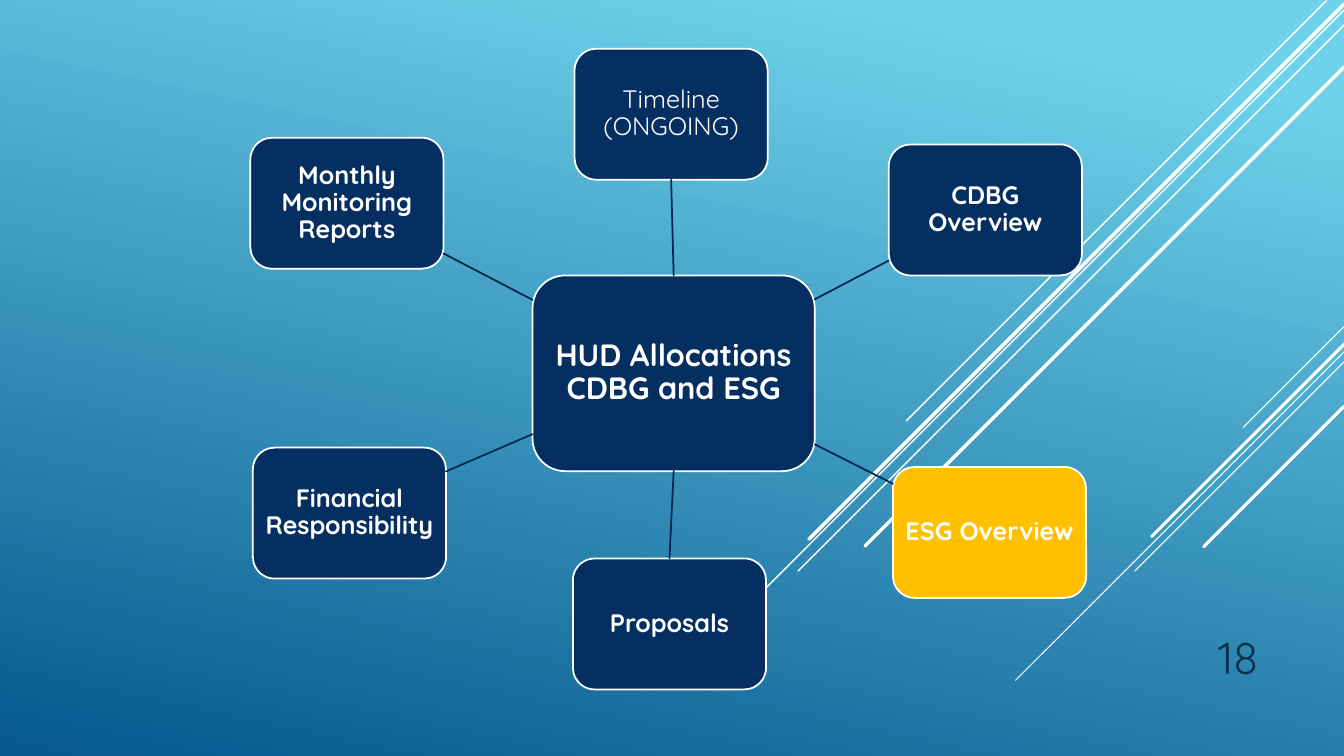
from dataclasses import dataclass

import pptx
import pptx.dml.color
import pptx.enum.shapes
import pptx.enum.text
import pptx.oxml.ns
import pptx.oxml.xmlchemy
import pptx.util
from lxml import etree

COLUMNS, ROWS = 16, 9
CELL = pptx.util.Inches(13.33) / COLUMNS


@dataclass(frozen=True)
class Theme:
    font: str = "Quicksand"
    sky: str = "6ED2EB"
    sea: str = "06588E"
    navy: str = "052F61"
    amber: str = "FFC000"
    spoke: str = "04264E"
    number: str = "0A304A"
    white: str = "FFFFFF"
    hub_size: int = 22
    node_size: int = 18
    number_size: int = 32
    outline: float = 1.25


@dataclass(frozen=True)
class Box:
    left: float
    top: float
    width: float
    height: float

    @property
    def center(self):
        return self.left + self.width / 2, self.top + self.height / 2

    def cells(self):
        return [grid(n) for n in (self.left, self.top, self.width, self.height)]

    def edge_toward(self, point):
        x, y = self.center
        across, down = point[0] - x, point[1] - y
        share = 1 / max(abs(across) / (self.width / 2), abs(down) / (self.height / 2))
        return x + across * share, y + down * share


THEME = Theme()
PAGE = Box(0, 0, COLUMNS, ROWS)
HUB = Box(6.34, 3.28, 3.36, 2.33)
NODE_WIDTH, NODE_HEIGHT = 2.3, 1.56
NODES = [
    ("Timeline (ONGOING)", 6.84, 0.58, THEME.navy, False),
    ("ESG Overview", 10.63, 5.56, THEME.amber, True),
    ("Proposals", 6.82, 6.65, THEME.navy, True),
    ("Monthly Monitoring Reports", 2.98, 1.64, THEME.navy, True),
    ("Financial Responsibility", 3.01, 5.33, THEME.navy, True),
    ("CDBG Overview", 10.58, 1.72, THEME.navy, True),
]
RAYS = [
    (0, 3.89, 1.2, 0.75), (0, 4.19, 3.91, 0.75), (0, 4.31, 2.49, 0.75),
    (0, 4.1, 2.29, 2.25), (0, 4.84, 1.67, 2.25),
    (0.21, 0.01, 5, 1), (0, 0.12, 7.98, 1), (0, 0.3, 6.5, 1),
    (0, 0.05, 6.37, 2.5), (0, 0.8, 5.7, 2.5),
]


def grid(cells):
    return pptx.util.Emu(round(cells * CELL))


def color(value):
    return pptx.dml.color.RGBColor.from_string(value)


def add_line(slide, start, end, line_color, weight):
    connector = slide.shapes.add_connector(
        pptx.enum.shapes.MSO_CONNECTOR.STRAIGHT, *map(grid, (*start, *end)))
    connector.line.color.rgb = color(line_color)
    connector.line.width = pptx.util.Pt(weight)
    properties = connector._element.spPr
    properties.find(pptx.oxml.ns.qn("a:ln")).set("cap", "rnd")
    etree.SubElement(properties, pptx.oxml.ns.qn("a:effectLst"))
    return connector


def write(shape, text, size, text_color, alignment, bold=False):
    shape.text_frame.word_wrap = True
    paragraph = shape.text_frame.paragraphs[0]
    paragraph.alignment = alignment
    run = paragraph.add_run()
    run.text = text
    run.font.name = THEME.font
    run.font.size = pptx.util.Pt(size)
    run.font.bold = bold
    run.font.color.rgb = color(text_color)
    return paragraph


def add_card(slide, box, text, size, fill, bold, margin):
    card = slide.shapes.add_shape(
        pptx.enum.shapes.MSO_SHAPE.ROUNDED_RECTANGLE, *box.cells())
    card.shadow.inherit = False
    card.fill.solid()
    card.fill.fore_color.rgb = color(fill)
    card.line.color.rgb = color(THEME.white)
    card.line.width = pptx.util.Pt(THEME.outline)
    frame = card.text_frame
    frame.vertical_anchor = pptx.enum.text.MSO_ANCHOR.MIDDLE
    frame.margin_left = frame.margin_right = pptx.util.Inches(margin)
    frame.margin_top = frame.margin_bottom = pptx.util.Inches(margin)
    paragraph = write(card, text, size, THEME.white, pptx.enum.text.PP_ALIGN.CENTER, bold)
    paragraph.line_spacing = 0.9
    return card


def add_background(slide):
    fill = slide.background.fill
    fill.gradient()
    fill.gradient_angle = 258
    stops = ((0.1, THEME.sky), (1, THEME.sea))
    for stop, (position, stop_color) in zip(fill.gradient_stops, stops):
        stop.position = position
        stop.color.rgb = color(stop_color)


def add_rays(slide, box):
    for inset, drop, length, weight in RAYS:
        x, y = box.left + box.width - inset, box.top + drop
        add_line(slide, (x, y), (x - length, y + length), THEME.white, weight)


def add_hub_and_spokes(slide, box):
    hub_box = Box(box.left + HUB.left, box.top + HUB.top, HUB.width, HUB.height)
    hub = add_card(slide, hub_box, "HUD Allocations CDBG and ESG",
                   THEME.hub_size, THEME.navy, True, 0.06)
    for text, left, top, fill, bold in NODES:
        node_box = Box(box.left + left, box.top + top, NODE_WIDTH, NODE_HEIGHT)
        node = add_card(slide, node_box, text, THEME.node_size, fill, bold, 0.05)
        spoke = add_line(slide, hub_box.edge_toward(node_box.center),
                         node_box.edge_toward(hub_box.center), THEME.spoke, THEME.outline)
        if node_box.top + node_box.height < hub_box.top and abs(
                node_box.center[0] - hub_box.center[0]) < 0.1:
            spoke.begin_connect(hub, 0)
            spoke.end_connect(node, 2)
        elif node_box.top > hub_box.top + hub_box.height:
            spoke.begin_connect(hub, 2)
            spoke.end_connect(node, 0)


def add_page_number(slide, box):
    number = slide.shapes.add_textbox(*box.cells())
    number.text_frame.vertical_anchor = pptx.enum.text.MSO_ANCHOR.BOTTOM
    write(number, "18", THEME.number_size, THEME.number, pptx.enum.text.PP_ALIGN.RIGHT)


def main():
    presentation = pptx.Presentation()
    presentation.slide_width = pptx.util.Inches(13.33)
    presentation.slide_height = pptx.util.Inches(7.5)
    slide = presentation.slides.add_slide(presentation.slide_layouts[6])
    add_background(slide)
    add_rays(slide, PAGE)
    add_hub_and_spokes(slide, PAGE)
    add_page_number(slide, Box(13.6, 7.32, 1.5, 0.88))
    presentation.save("out.pptx")


if __name__ == "__main__":
    main()
